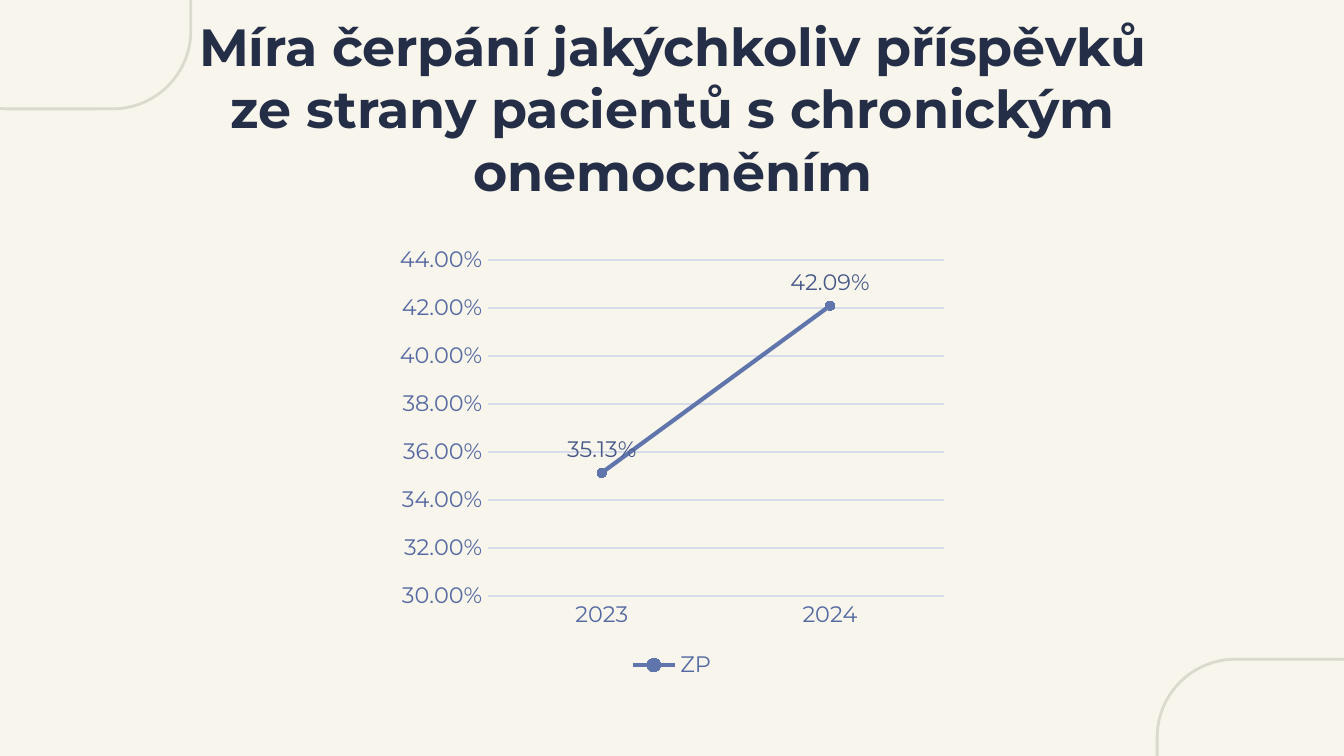
import pptx
import pptx.util
import pptx.chart.data
import pptx.dml.color
import pptx.enum.chart
import pptx.enum.shapes
import pptx.enum.text

# Content
TITLE = "Míra čerpání jakýchkoliv příspěvků\vze strany pacientů s chronickým onemocněním"
YEARS = ["2023", "2024"]
NAME, RATES = "ZP", [0.3513, 0.4209]
FONT = "Montserrat"
HUES = {"back": "F8F5EC", "frame": "DADACE", "title": "252E47", "axis": "556AA3",
        "grid": "D7DCEA", "line": "6075AC", "label": "475989"}

# Places: left, top, width, height in percent of the slide
WIDE = 10
HIGH = WIDE * 9 / 16
FRAMES = [(-5.2, -26.9, 19.4, 41.3), (86.1, 87.2, 19.4, 41.3)]
HEAD = (7.9, 8.7, 84.3, 11.2)
PLOT = (28.9, 31.45, 42.2, 59)
ROUND = 0.3


def box(part):
    sides = (WIDE, HIGH, WIDE, HIGH)
    return [pptx.util.Inches(share * side / 100) for share, side in zip(part, sides)]


def hue(name):
    return pptx.dml.color.RGBColor.from_string(HUES[name])


def style(font, size, name, bold=False):
    font.name, font.size, font.bold = FONT, pptx.util.Pt(size), bold
    font.color.rgb = hue(name)


def stroke(line, name, width):
    line.color.rgb = hue(name)
    line.width = pptx.util.Pt(width)


def add_frame(slide, part):
    kind = pptx.enum.shapes.MSO_SHAPE.ROUNDED_RECTANGLE
    frame = slide.shapes.add_shape(kind, *box(part))
    frame.adjustments[0] = ROUND
    frame.shadow.inherit = False
    frame.fill.background()
    stroke(frame.line, "frame", 1.5)


def add_title(slide):
    text = slide.shapes.add_textbox(*box(HEAD)).text_frame
    text.word_wrap = True
    text.vertical_anchor = pptx.enum.text.MSO_ANCHOR.MIDDLE
    text.margin_left = text.margin_right = pptx.util.Inches(0.1)
    text.margin_top = text.margin_bottom = pptx.util.Inches(0.1)
    text.text = TITLE
    para = text.paragraphs[0]
    # A vertical tab in paragraph text becomes a line break
    para.text = TITLE
    para.alignment = pptx.enum.text.PP_ALIGN.CENTER
    for run in para.runs:
        style(run.font, 28, "title", True)


def add_plot(slide):
    enum = pptx.enum.chart
    data = pptx.chart.data.CategoryChartData(number_format="0.00%")
    data.categories = YEARS
    data.add_series(NAME, RATES)
    kind = enum.XL_CHART_TYPE.LINE_MARKERS
    chart = slide.shapes.add_chart(kind, *box(PLOT), data).chart
    chart.has_title = False
    style(chart.font, 12, "axis")

    # Axes and grid
    years, rates = chart.category_axis, chart.value_axis
    for axis in (years, rates):
        axis.major_tick_mark = axis.minor_tick_mark = enum.XL_TICK_MARK.NONE
        style(axis.tick_labels.font, 12, "axis")
    stroke(years.format.line, "grid", 0.75)
    rates.format.line.fill.background()
    rates.minimum_scale, rates.maximum_scale, rates.major_unit = 0.3, 0.44, 0.02
    rates.has_major_gridlines = True
    stroke(rates.major_gridlines.format.line, "grid", 0.75)
    rates.tick_labels.number_format = "0.00%"
    rates.tick_labels.number_format_is_linked = False

    # Legend
    chart.has_legend = True
    chart.legend.position = enum.XL_LEGEND_POSITION.BOTTOM
    chart.legend.include_in_layout = False
    style(chart.legend.font, 12, "axis")

    # Line, markers and value labels
    plot = chart.plots[0]
    plot.vary_by_categories = False
    line = plot.series[0]
    line.smooth = False
    stroke(line.format.line, "line", 2.25)
    mark = line.marker
    mark.style, mark.size = enum.XL_MARKER_STYLE.CIRCLE, 5
    mark.format.fill.solid()
    mark.format.fill.fore_color.rgb = hue("line")
    stroke(mark.format.line, "line", 0.75)
    tags = line.data_labels
    tags.show_value = True
    tags.position = enum.XL_LABEL_POSITION.ABOVE
    tags.number_format, tags.number_format_is_linked = "0.00%", False
    style(tags.font, 12, "label")


def main():
    deck = pptx.Presentation()
    deck.slide_width = pptx.util.Inches(WIDE)
    deck.slide_height = pptx.util.Inches(HIGH)
    slide = deck.slides.add_slide(deck.slide_layouts[6])
    slide.background.fill.solid()
    slide.background.fill.fore_color.rgb = hue("back")
    for part in FRAMES:
        add_frame(slide, part)
    add_title(slide)
    add_plot(slide)
    deck.save("out.pptx")


if __name__ == "__main__":
    main()
